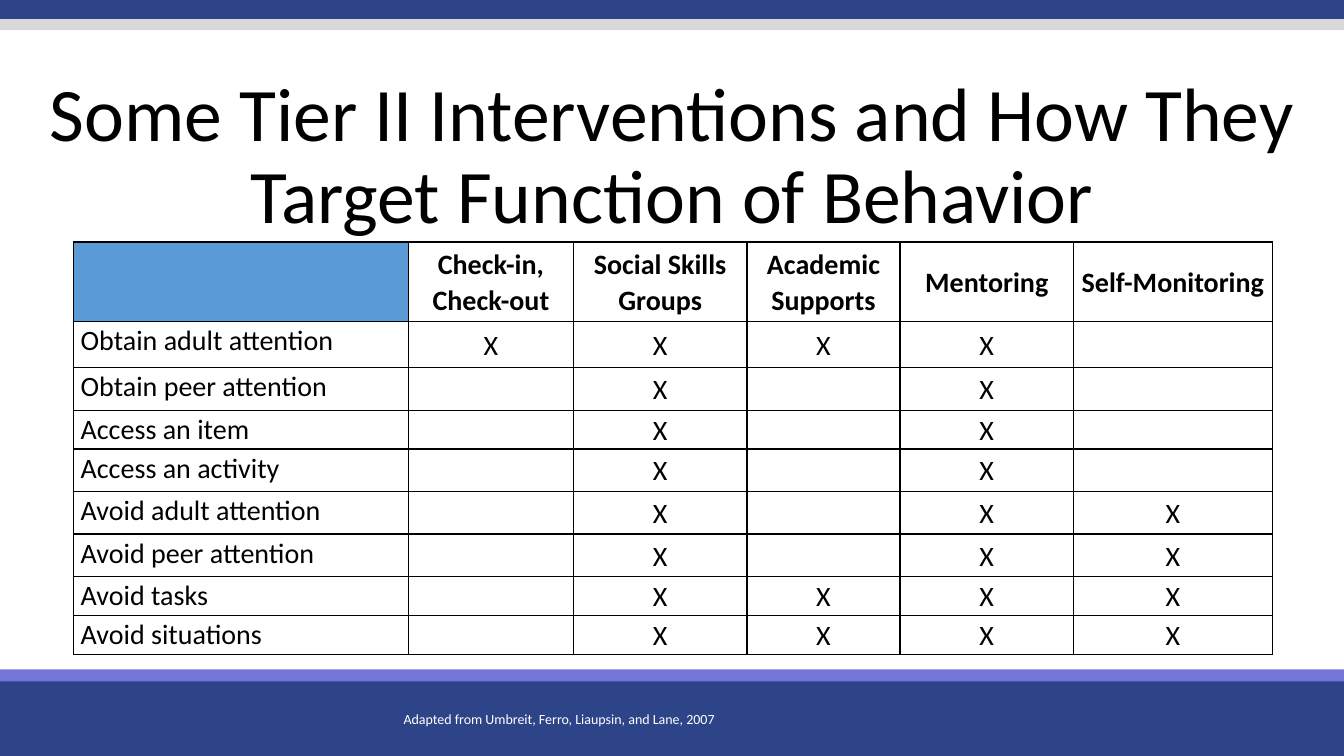
import pptx
import pptx.util
import pptx.dml.color
import pptx.enum.shapes
import pptx.enum.text
import pptx.oxml
import pptx.oxml.ns

WIDTH = pptx.util.Inches(13.33)
HEIGHT = pptx.util.Inches(7.5)
ALIGN = pptx.enum.text.PP_ALIGN
ANCHOR = pptx.enum.text.MSO_ANCHOR
COLORS = {
    "navy": "2E4488",
    "violet": "7476DA",
    "gray": "D8D8D8",
    "blue": "5B9BD5",
    "black": "000000",
    "white": "FFFFFF",
}
BARS = [
    (89.33, 10.67, "navy"),
    (88.53, 1.6, "violet"),
    (-0.4, 2.93, "navy"),
    (2.53, 1.47, "gray"),
]
COLUMN_SHARES = [24.9, 12.3, 12.9, 11.4, 12.9, 14.8]
ROW_SHARES = [10.5, 6.1, 5.65, 5.15, 5.6, 5.65, 5.65, 5.15, 5.1]
INTERVENTIONS = [
    "Check-in,\nCheck-out",
    "Social Skills Groups",
    "Academic Supports",
    "Mentoring",
    "Self-Monitoring",
]
FUNCTIONS = [
    ("Obtain adult attention", "XXXX "),
    ("Obtain peer attention", " X X "),
    ("Access an item", " X X "),
    ("Access an activity", " X X "),
    ("Avoid adult attention", " X XX"),
    ("Avoid peer attention", " X XX"),
    ("Avoid tasks", " XXXX"),
    ("Avoid situations", " XXXX"),
]


def across(percent):
    return round(WIDTH * percent / 100)


def down(percent):
    return round(HEIGHT * percent / 100)


def area(left, top, width, height):
    return across(left), down(top), across(width), down(height)


def rgb(color):
    return pptx.dml.color.RGBColor.from_string(COLORS[color])


def write_text(frame, text, size=20, color="black", bold=False, align=ALIGN.CENTER, spacing=1.07):
    frame.text = text
    frame.word_wrap = True
    for paragraph in frame.paragraphs:
        paragraph.alignment = align
        paragraph.line_spacing = spacing
        paragraph.space_before = pptx.util.Pt(0)
        for run in paragraph.runs:
            run.font.name = "Calibri"
            run.font.size = pptx.util.Pt(size)
            run.font.bold = bold
            run.font.color.rgb = rgb(color)


def add_bar(slide, top, height, color):
    bar = slide.shapes.add_shape(
        pptx.enum.shapes.MSO_SHAPE.RECTANGLE, *area(0, top, 100, height)
    )
    bar.shadow.inherit = False
    bar.fill.solid()
    bar.fill.fore_color.rgb = rgb(color)
    bar.line.fill.background()


def add_title(slide, text):
    title = slide.shapes.title
    title.left, title.top, title.width, title.height = area(0, 9.2, 100, 23.47)
    write_text(title.text_frame, text, size=54, spacing=0.9)
    title.text_frame.auto_size = pptx.enum.text.MSO_AUTO_SIZE.NONE
    title.text_frame.vertical_anchor = ANCHOR.MIDDLE


def add_borders(cell):
    properties = cell._tc.get_or_add_tcPr()
    for index, side in enumerate(("lnL", "lnR", "lnT", "lnB")):
        border = pptx.oxml.parse_xml(
            f'<a:{side} {pptx.oxml.ns.nsdecls("a")} w="12700"><a:solidFill>'
            f'<a:srgbClr val="{COLORS["black"]}"/></a:solidFill></a:{side}>'
        )
        properties.insert(index, border)


def fill_cell(cell, text, **text_format):
    cell.margin_left = cell.margin_right = pptx.util.Inches(0.07)
    cell.margin_top = cell.margin_bottom = 0
    cell.fill.background()
    add_borders(cell)
    if text.strip():
        write_text(cell.text_frame, text, **text_format)


def add_intervention_table(slide):
    frame = slide.shapes.add_table(
        len(ROW_SHARES),
        len(COLUMN_SHARES),
        *area(5.48, 32, sum(COLUMN_SHARES), sum(ROW_SHARES)),
    )
    table = frame.table
    table.first_row = table.horz_banding = False
    for column, share in zip(table.columns, COLUMN_SHARES):
        column.width = across(share)
    for row, share in zip(table.rows, ROW_SHARES):
        row.height = down(share)

    contents = [["", *INTERVENTIONS]] + [[name, *marks] for name, marks in FUNCTIONS]
    for row_index, texts in enumerate(contents):
        for column_index, text in enumerate(texts):
            cell = table.cell(row_index, column_index)
            is_label = column_index == 0
            fill_cell(
                cell,
                text,
                bold=row_index == 0,
                align=ALIGN.LEFT if is_label else ALIGN.CENTER,
            )
            cell.vertical_anchor = ANCHOR.TOP if is_label else ANCHOR.MIDDLE
    corner = table.cell(0, 0)
    corner.fill.solid()
    corner.fill.fore_color.rgb = rgb("blue")


def add_citation(slide, text):
    box = slide.shapes.add_textbox(*area(27.98, 93.2, 27.23, 3.87))
    write_text(box.text_frame, text, size=10, color="white")


def main():
    presentation = pptx.Presentation()
    presentation.slide_width = WIDTH
    presentation.slide_height = HEIGHT
    slide = presentation.slides.add_slide(presentation.slide_layouts[5])
    for top, height, color in BARS:
        add_bar(slide, top, height, color)
    add_title(slide, "Some Tier II Interventions and How They Target Function of Behavior")
    add_intervention_table(slide)
    add_citation(slide, "Adapted from Umbreit, Ferro, Liaupsin, and Lane, 2007")
    presentation.save("out.pptx")


if __name__ == "__main__":
    main()
